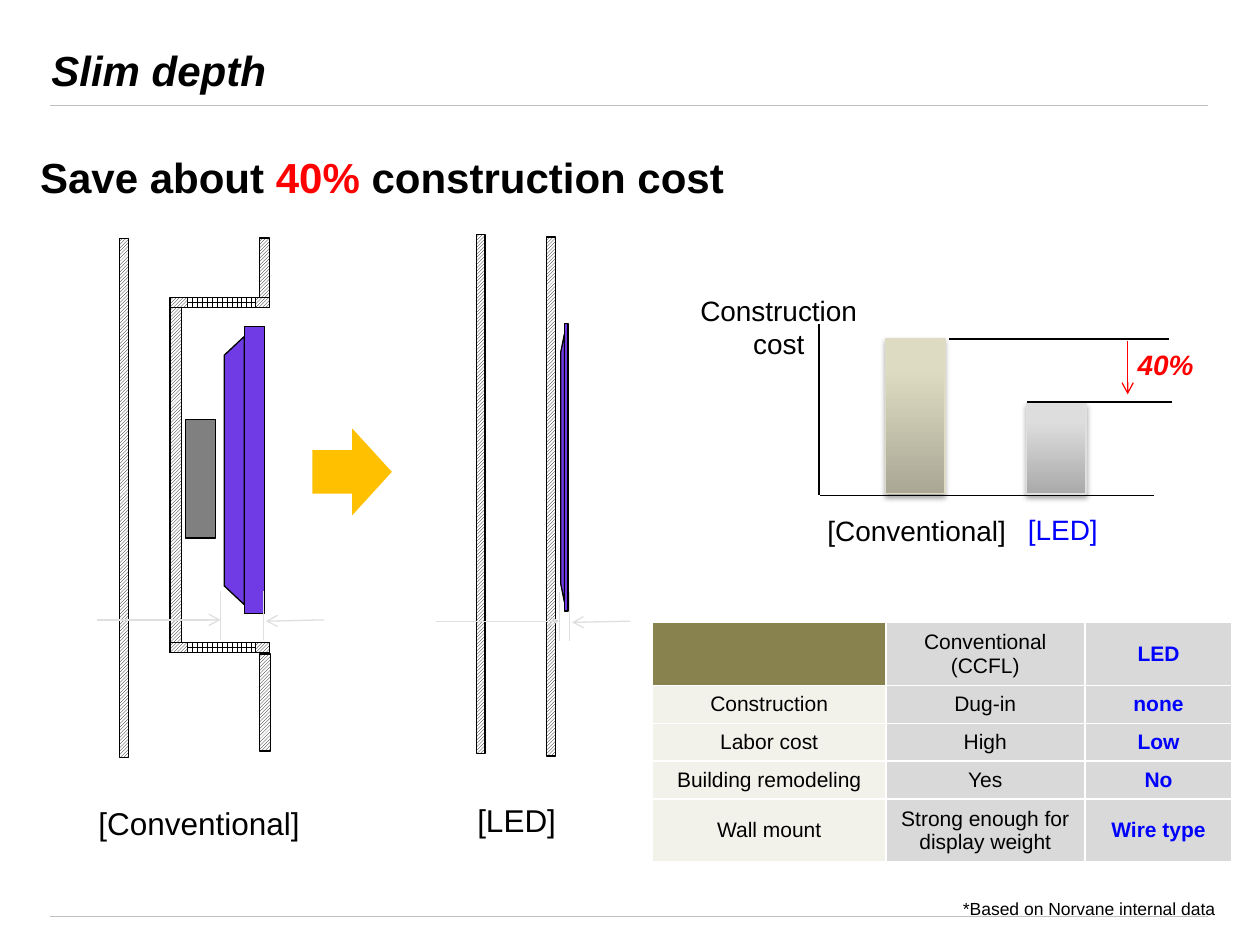
from copy import deepcopy

from lxml.etree import SubElement
from pptx import Presentation
from pptx.dml.color import RGBColor
from pptx.enum.dml import MSO_PATTERN
from pptx.enum.shapes import MSO_CONNECTOR, MSO_SHAPE
from pptx.enum.text import MSO_ANCHOR, PP_ALIGN
from pptx.oxml.ns import qn
from pptx.util import Inches, Pt

COLORS = {
    "black": "000000", "white": "FFFFFF", "red": "FF0000", "blue": "0000FF",
    "rule": "C0C0C0", "dimension": "DFDFDF", "arrow": "FFC000",
    "panel": "703BE5", "device": "808080", "olive": "88824E",
    "cream": "F3F2EA", "cell": "D9D9D9", "beige edge": "DDDBC6",
    "beige dark": "AAA895", "beige": "DDDBC1", "beige light": "DFDCC2",
    "gray dark": "AAAAAA", "gray": "DDDDDD", "gray light": "DEDEDE",
}
HATCH = MSO_PATTERN.LIGHT_UPWARD_DIAGONAL
GRILLE = MSO_PATTERN.LARGE_GRID
TABLE_ROWS = [
    ("", "Conventional (CCFL)", "LED"),
    ("Construction", "Dug-in", "none"),
    ("Labor cost", "High", "Low"),
    ("Building remodeling", "Yes", "No"),
    ("Wall mount", "Strong enough for display weight", "Wire type"),
]


def rgb(name):
    """Return the named color."""
    return RGBColor.from_string(COLORS[name])


def write(paragraph, text, size=16, color="black", bold=False, italic=False,
          align=PP_ALIGN.LEFT):
    """Append a formatted run to a paragraph."""
    paragraph.alignment = align
    run = paragraph.add_run()
    run.text = text
    font = run.font
    font.name, font.size = "Arial", Pt(size)
    font.bold, font.italic = bold, italic
    font.color.rgb = rgb(color)


def add_text(slide, box, lines, wrap=True, spacing=None, **style):
    """Add a text box whose lines are lists of (text, color) parts."""
    frame = slide.shapes.add_textbox(*map(Inches, box)).text_frame
    frame.word_wrap = wrap
    for index, parts in enumerate(lines):
        paragraph = frame.add_paragraph() if index else frame.paragraphs[0]
        if spacing:
            paragraph.line_spacing = spacing
        for text, color in parts:
            write(paragraph, text, color=color, **style)


def add_line(slide, start, end, color="black", width=0.75, arrow=False):
    """Add a straight line, optionally with an open arrowhead at its end."""
    line = slide.shapes.add_connector(
        MSO_CONNECTOR.STRAIGHT, *map(Inches, (*start, *end)))
    line.line.color.rgb = rgb(color)
    line.line.width = Pt(width)
    if arrow:
        SubElement(line.line._get_or_add_ln(), qn("a:tailEnd"), type="arrow")
    SubElement(line._element.spPr, qn("a:effectLst"))


def paint(shape, fill, outline="black"):
    """Give a shape a solid fill and a thin outline, or no outline."""
    shape.shadow.inherit = False
    shape.fill.solid()
    shape.fill.fore_color.rgb = rgb(fill)
    if outline:
        shape.line.color.rgb = rgb(outline)
        shape.line.width = Pt(0.75)
    else:
        shape.line.fill.background()


def add_box(slide, box, fill="white", outline="black", kind=MSO_SHAPE.RECTANGLE):
    """Add a solid preset shape."""
    shape = slide.shapes.add_shape(kind, *map(Inches, box))
    paint(shape, fill, outline)
    return shape


def add_patterned(slide, box, pattern=HATCH):
    """Add a rectangle with a black and white pattern."""
    fill = add_box(slide, box).fill
    fill.patterned()
    fill.pattern = pattern
    fill.fore_color.rgb = rgb("black")
    fill.back_color.rgb = rgb("white")


def add_bar(slide, box, tone, outline):
    """Add a shaded column with a soft shadow."""
    bar = add_box(slide, box, outline=outline)
    bar.fill.gradient()
    bar.fill.gradient_angle = 90
    properties = bar._element.spPr
    stop_list = properties.find(".//" + qn("a:gsLst"))
    stop_list.append(deepcopy(stop_list[0]))
    shades = [(0, f"{tone} dark"), (0.8, tone), (1, f"{tone} light")]
    for stop, (position, color) in zip(bar.fill.gradient_stops, shades):
        stop.position = position
        stop.color.rgb = rgb(color)
    shadow = SubElement(
        properties.find(qn("a:effectLst")), qn("a:outerShdw"),
        blurRad=str(Pt(3.1)), dist=str(Pt(1.8)), dir="5400000", rotWithShape="0")
    color = SubElement(shadow, qn("a:srgbClr"), val=COLORS["black"])
    SubElement(color, qn("a:alpha"), val="35000")


def add_display(slide, back, front, width, top):
    """Add a display seen from the side, with its tapered back."""
    points = [(front, top + 0.08), (back, top + 0.23),
              (back, top + 2.06), (front, top + 2.21)]
    corners = [(Inches(x), Inches(y)) for x, y in points]
    builder = slide.shapes.build_freeform(*corners[0], scale=1.0)
    builder.add_line_segments(corners[1:], close=True)
    paint(builder.convert_to_shape(), "panel")
    add_box(slide, (front, top, width, 2.28), "panel")


def add_depth_marks(slide, left, right, y):
    """Mark a depth with two arrows pointing at two edges."""
    add_line(slide, (left - 0.98, y), (left, y), "dimension", arrow=True)
    add_line(slide, (right + 0.48, y), (right + 0.02, y + 0.01), "dimension",
             arrow=True)
    for edge in (left, right):
        add_line(slide, (edge, y - 0.23), (edge, y + 0.16), "dimension")


def add_conventional_section(slide):
    """Draw the wall niche with the conventional display."""
    add_patterned(slide, (1.35, 2.44, 0.09, 2.74))
    add_display(slide, 1.78, 1.94, 0.16, 2.59)
    for wall in [(2.06, 1.89, 0.08, 0.47), (2.06, 5.19, 0.09, 0.77),
                 (0.95, 1.89, 0.07, 4.12)]:
        add_patterned(slide, wall)
    for top in (2.36, 5.1):
        add_patterned(slide, (1.35, top, 0.79, 0.08))
        add_patterned(slide, (1.49, top, 0.54, 0.08), GRILLE)
    add_box(slide, (1.47, 3.33, 0.24, 0.94), "device")
    add_depth_marks(slide, 1.75, 2.09, 4.92)


def add_led_section(slide):
    """Draw the flat wall with the LED display."""
    add_patterned(slide, (3.78, 1.86, 0.07, 4.12))
    add_patterned(slide, (4.34, 1.88, 0.07, 4.12))
    add_display(slide, 4.45, 4.48, 0.03, 2.57)
    add_depth_marks(slide, 4.44, 4.52, 4.93)


def add_cost_diagram(slide):
    """Draw the sketch that compares the construction costs."""
    center = PP_ALIGN.CENTER
    add_text(slide, (6.32, 4.03, 1.91, 0.37), [[("[Conventional]", "black")]],
             align=center)
    add_text(slide, (7.84, 4.02, 1.19, 0.37), [[("[LED]", "blue")]], align=center)
    add_bar(slide, (7.03, 2.69, 0.47, 1.23), "beige", "beige edge")
    add_bar(slide, (8.15, 3.2, 0.47, 0.72), "gray", "dimension")
    for start, end in [((7.53, 2.69), (9.28, 2.69)), ((6.51, 3.93), (9.16, 3.93)),
                       ((8.15, 3.19), (9.3, 3.19)), ((6.5, 3.93), (6.5, 2.57))]:
        add_line(slide, start, end)
    add_line(slide, (8.95, 2.71), (8.95, 3.13), "red", arrow=True)
    add_text(slide, (8.92, 2.71, 0.65, 0.37), [[("40%", "red")]], wrap=False,
             bold=True, italic=True, align=PP_ALIGN.RIGHT)
    add_text(slide, (5.19, 2.28, 1.98, 0.64),
             [[("Construction", "black")], [("cost", "black")]], align=center)


def add_border(cell):
    """Give a table cell thin white borders."""
    properties = cell._tc.get_or_add_tcPr()
    for index, side in enumerate(("lnL", "lnR", "lnT", "lnB")):
        line = properties.makeelement(qn(f"a:{side}"), {"w": str(Pt(1))})
        properties.insert(index, line)
        fill = SubElement(line, qn("a:solidFill"))
        SubElement(fill, qn("a:srgbClr"), val=COLORS["white"])


def add_comparison_table(slide):
    """Add the table that compares both types."""
    table = slide.shapes.add_table(
        5, 3, *map(Inches, (5.18, 4.94, 4.6, 1.89))).table
    table.first_row = table.horz_banding = False
    for column, width in zip(table.columns, (1.85, 1.58, 1.17)):
        column.width = Inches(width)
    for row, height in zip(table.rows, (0.49, 0.3, 0.3, 0.3, 0.5)):
        row.height = Inches(height)
    for r, texts in enumerate(TABLE_ROWS):
        for c, text in enumerate(texts):
            cell = table.cell(r, c)
            cell.fill.solid()
            cell.fill.fore_color.rgb = rgb(
                "cell" if c else "cream" if r else "olive")
            cell.vertical_anchor = MSO_ANCHOR.MIDDLE
            cell.margin_left = cell.margin_right = Inches(0.04)
            cell.margin_top = cell.margin_bottom = Inches(0.05)
            add_border(cell)
            if text:
                write(cell.text_frame.paragraphs[0], text, size=12,
                      color="blue" if c == 2 else "black", bold=c == 2,
                      align=PP_ALIGN.CENTER)


def main():
    """Build the slide and save it."""
    presentation = Presentation()
    presentation.slide_width, presentation.slide_height = Inches(10), Inches(7.5)
    slide = presentation.slides.add_slide(presentation.slide_layouts[6])
    for y in (0.84, 7.27):
        add_line(slide, (0.4, y), (9.59, y), "rule", 0.5)
    add_text(slide, (0.31, 0.3, 9, 1.25), [[("Slim depth", "black")]],
             size=24, bold=True, italic=True)
    add_text(slide, (0.22, 0.95, 9.48, 0.63),
             [[("Save about ", "black"), ("40%", "red"),
               (" construction cost", "black")]],
             spacing=1.5, size=24, bold=True)
    for left, top, label in [(0.17, 6.33, "[Conventional]"), (2.69, 6.31, "[LED]")]:
        add_text(slide, (left, top, 2.82, 0.4), [[(label, "black")]],
                 size=18, align=PP_ALIGN.CENTER)
    arrow = add_box(slide, (2.45, 3.43, 0.69, 0.63), "arrow", None,
                    MSO_SHAPE.UP_ARROW)
    arrow.rotation = 90
    add_conventional_section(slide)
    add_led_section(slide)
    add_comparison_table(slide)
    add_cost_diagram(slide)
    add_text(slide, (5.92, 7.08, 3.82, 0.27),
             [[("*Based on Norvane internal data", "black")]],
             size=10, align=PP_ALIGN.RIGHT)
    presentation.save("out.pptx")


if __name__ == "__main__":
    main()
